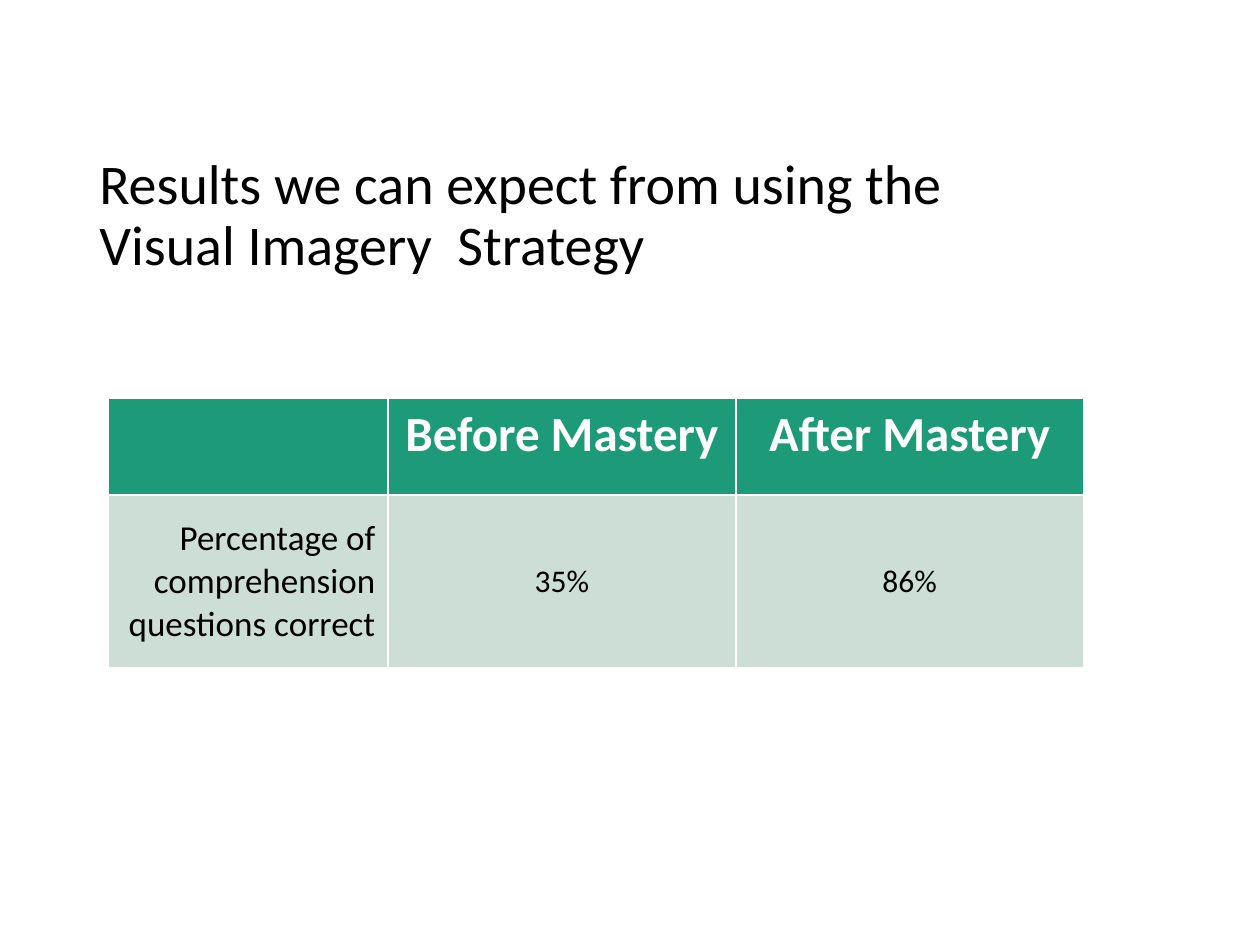
"""Build a slide with a title and a table of results before and after mastery."""
from pptx import Presentation
from pptx.dml.color import RGBColor
from pptx.enum.text import MSO_ANCHOR, PP_ALIGN
from pptx.util import Inches, Pt

COLORS = {"header": "1D9A78", "body": "CDDED6", "light": "FFFFFF", "dark": "000000"}


def write_text(paragraph, text, size, color, bold=False):
    run = paragraph.add_run()
    run.text = text
    font_format = {"name": "Calibri", "size": Pt(size), "bold": bold}
    for attribute, value in font_format.items():
        setattr(run.font, attribute, value)
    run.font.color.rgb = RGBColor.from_string(COLORS[color])


presentation = Presentation()
presentation.slide_width = Inches(10)
presentation.slide_height = Inches(7.5)
slide = presentation.slides.add_slide(presentation.slide_layouts[6])

title = slide.shapes.add_textbox(Inches(0.69), Inches(0.5), Inches(7.63), Inches(1.75))
title.text_frame.word_wrap = True
title.text_frame.vertical_anchor = MSO_ANCHOR.BOTTOM
paragraph = title.text_frame.paragraphs[0]
paragraph.line_spacing = 0.9
write_text(paragraph, "Results we can expect from using the Visual Imagery  Strategy", 32, "dark")

rows = [
    {
        "height": 0.77,
        "texts": ["", "Before Mastery", "After Mastery"],
        "sizes": [28, 28, 28],
        "fill": "header",
        "color": "light",
        "bold": True,
        "anchor": MSO_ANCHOR.TOP,
    },
    {
        "height": 1.37,
        "texts": ["Percentage of comprehension questions correct", "35%", "86%"],
        "sizes": [20, 18, 18],
        "fill": "body",
        "color": "dark",
        "bold": False,
        "anchor": MSO_ANCHOR.MIDDLE,
    },
]
column_widths = [2.22, 2.76, 2.76]
alignments = [PP_ALIGN.RIGHT, PP_ALIGN.CENTER, PP_ALIGN.CENTER]

table = slide.shapes.add_table(
    len(rows), len(column_widths), Inches(0.86), Inches(3.16), Inches(7.74), Inches(2.14)
).table
for column, width in zip(table.columns, column_widths):
    column.width = Inches(width)

for table_row, row in zip(table.rows, rows):
    table_row.height = Inches(row["height"])
    for cell, text, size, alignment in zip(table_row.cells, row["texts"], row["sizes"], alignments):
        cell.fill.solid()
        cell.fill.fore_color.rgb = RGBColor.from_string(COLORS[row["fill"]])
        cell.vertical_anchor = row["anchor"]
        paragraph = cell.text_frame.paragraphs[0]
        paragraph.alignment = alignment
        if text:
            write_text(paragraph, text, size, row["color"], row["bold"])

presentation.save("out.pptx")
